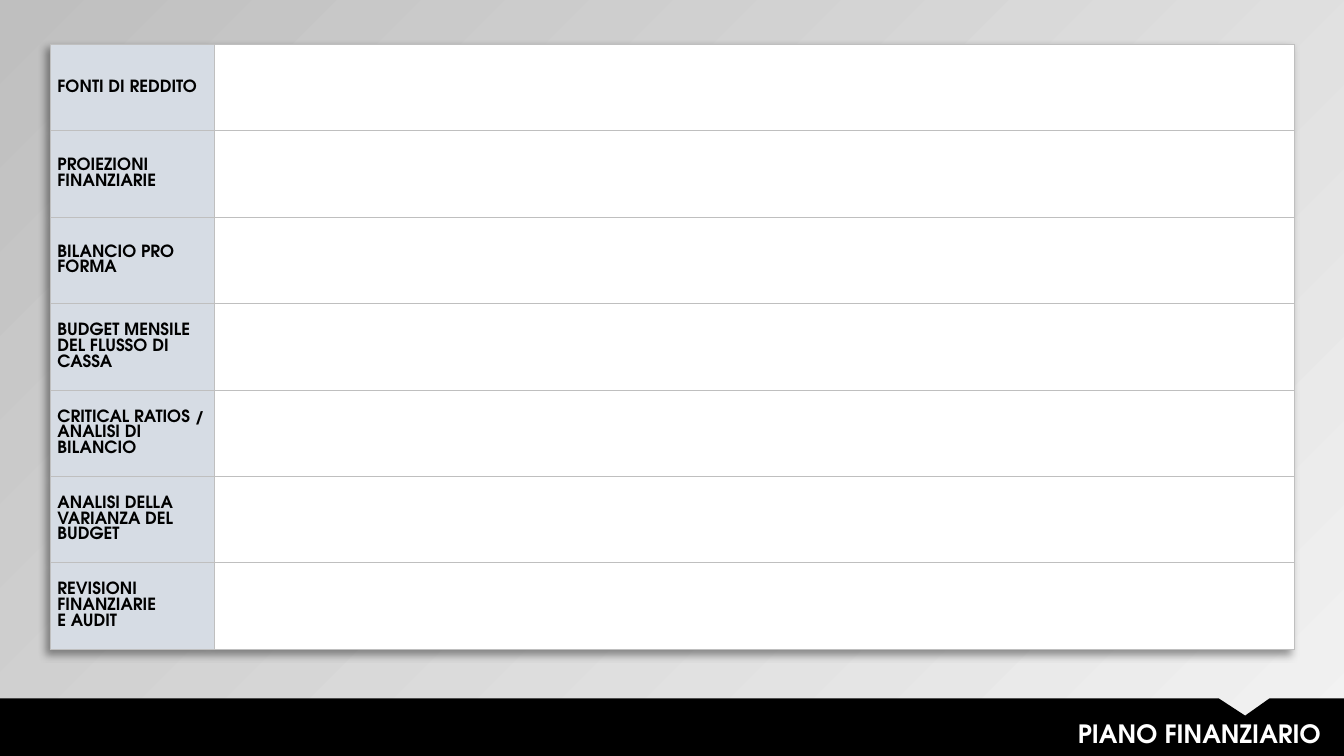
from lxml.etree import SubElement
from pptx import Presentation
from pptx.dml.color import RGBColor
from pptx.enum.text import MSO_ANCHOR, MSO_AUTO_SIZE, PP_ALIGN
from pptx.oxml import parse_xml
from pptx.oxml.ns import nsdecls, qn
from pptx.util import Inches, Pt

BLACK = RGBColor(0x00, 0x00, 0x00)
WHITE = RGBColor(0xFF, 0xFF, 0xFF)
LABEL_BLUE = RGBColor(0xD6, 0xDC, 0xE4)
GRID_GRAY = RGBColor(0xBF, 0xBF, 0xBF)
LIGHT_GRAY = RGBColor(0xF2, 0xF2, 0xF2)
FONT = "TeX Gyre Adventor"

SLIDE_W, SLIDE_H = 13.33, 7.5
TABLE_LEFT, TABLE_TOP, TABLE_H = 0.5, 0.44, 6
LABEL_W, ENTRY_W = 1.63, 10.71
BAND_TOP = 6.93

TITLE = "PIANO FINANZIARIO"
TOPICS = [
    "FONTI DI REDDITO",
    "PROIEZIONI FINANZIARIE",
    "BILANCIO PRO FORMA",
    "BUDGET MENSILE DEL FLUSSO DI CASSA",
    "CRITICAL RATIOS / ANALISI DI BILANCIO",
    "ANALISI DELLA VARIANZA DEL BUDGET",
    "REVISIONI FINANZIARIE \vE AUDIT",
]


def style_runs(paragraph, size, color):
    for run in paragraph.runs:
        run.font.name = FONT
        run.font.size = Pt(size)
        run.font.bold = True
        run.font.color.rgb = color


def paint_background(slide):
    fill = slide.background.fill
    fill.gradient()
    fill.gradient_angle = 135
    light, dark = fill.gradient_stops
    light.color.rgb = LIGHT_GRAY
    dark.color.rgb = GRID_GRAY
    # The light end is translucent
    light_rgb = next(slide.background.fill._xPr.iter(qn("a:srgbClr")))
    SubElement(light_rgb, qn("a:alpha"), val="40000")


def format_cell(cell, fill_color):
    cell.fill.solid()
    cell.fill.fore_color.rgb = fill_color
    cell.vertical_anchor = MSO_ANCHOR.MIDDLE
    cell.margin_left = cell.margin_right = Inches(0.07)
    cell.margin_top = cell.margin_bottom = 0
    properties = cell._tc.get_or_add_tcPr()
    for position, side in enumerate(("lnL", "lnR", "lnT", "lnB")):
        properties.insert(position, parse_xml(
            f'<a:{side} {nsdecls("a")} w="{Pt(0.5)}"><a:solidFill>'
            f'<a:srgbClr val="{GRID_GRAY}"/></a:solidFill></a:{side}>'))


def add_table_shadow(table):
    table._tbl.tblPr.insert(0, parse_xml(
        f'<a:effectLst {nsdecls("a")}><a:outerShdw blurRad="{Pt(6)}" '
        f'dist="{Pt(4)}" dir="8100000" algn="tr" rotWithShape="0">'
        '<a:srgbClr val="000000"><a:alpha val="40000"/></a:srgbClr>'
        '</a:outerShdw></a:effectLst>'))


def add_plan_table(slide):
    table = slide.shapes.add_table(
        len(TOPICS), 2, Inches(TABLE_LEFT), Inches(TABLE_TOP),
        Inches(LABEL_W + ENTRY_W), Inches(TABLE_H)).table
    table.first_row = table.horz_banding = False
    table.columns[0].width = Inches(LABEL_W)
    table.columns[1].width = Inches(ENTRY_W)
    for row, topic in zip(table.rows, TOPICS):
        label, entry = row.cells
        label.text = topic
        style_runs(label.text_frame.paragraphs[0], 12, BLACK)
        format_cell(label, LABEL_BLUE)
        format_cell(entry, WHITE)
    add_table_shadow(table)


def add_footer_band(slide):
    outline = [(12.09, BAND_TOP), (12.35, 7.1), (12.59, BAND_TOP),
               (SLIDE_W, BAND_TOP), (SLIDE_W, SLIDE_H), (0, SLIDE_H)]
    builder = slide.shapes.build_freeform(0, Inches(BAND_TOP))
    builder.add_line_segments([(Inches(x), Inches(y)) for x, y in outline])
    band = builder.convert_to_shape()
    band.fill.solid()
    band.fill.fore_color.rgb = BLACK
    band.line.fill.background()
    band.shadow.inherit = False


def place_title(slide):
    title = slide.shapes.title
    title.left, title.top = Inches(4.14), Inches(7.08)
    title.width, title.height = Inches(9.06), Inches(0.4)
    frame = title.text_frame
    frame.text = TITLE
    frame.word_wrap = True
    frame.auto_size = MSO_AUTO_SIZE.SHAPE_TO_FIT_TEXT
    frame.vertical_anchor = MSO_ANCHOR.TOP
    paragraph = frame.paragraphs[0]
    paragraph.alignment = PP_ALIGN.RIGHT
    paragraph.line_spacing = 1.0
    paragraph.space_before = Pt(0)
    style_runs(paragraph, 18, WHITE)
    # Bring the title in front of the band
    title.element.getparent().append(title.element)


def main():
    deck = Presentation()
    deck.slide_width, deck.slide_height = Inches(SLIDE_W), Inches(SLIDE_H)
    slide = deck.slides.add_slide(deck.slide_layouts[5])
    paint_background(slide)
    add_plan_table(slide)
    add_footer_band(slide)
    place_title(slide)
    deck.save("out.pptx")


if __name__ == "__main__":
    main()
